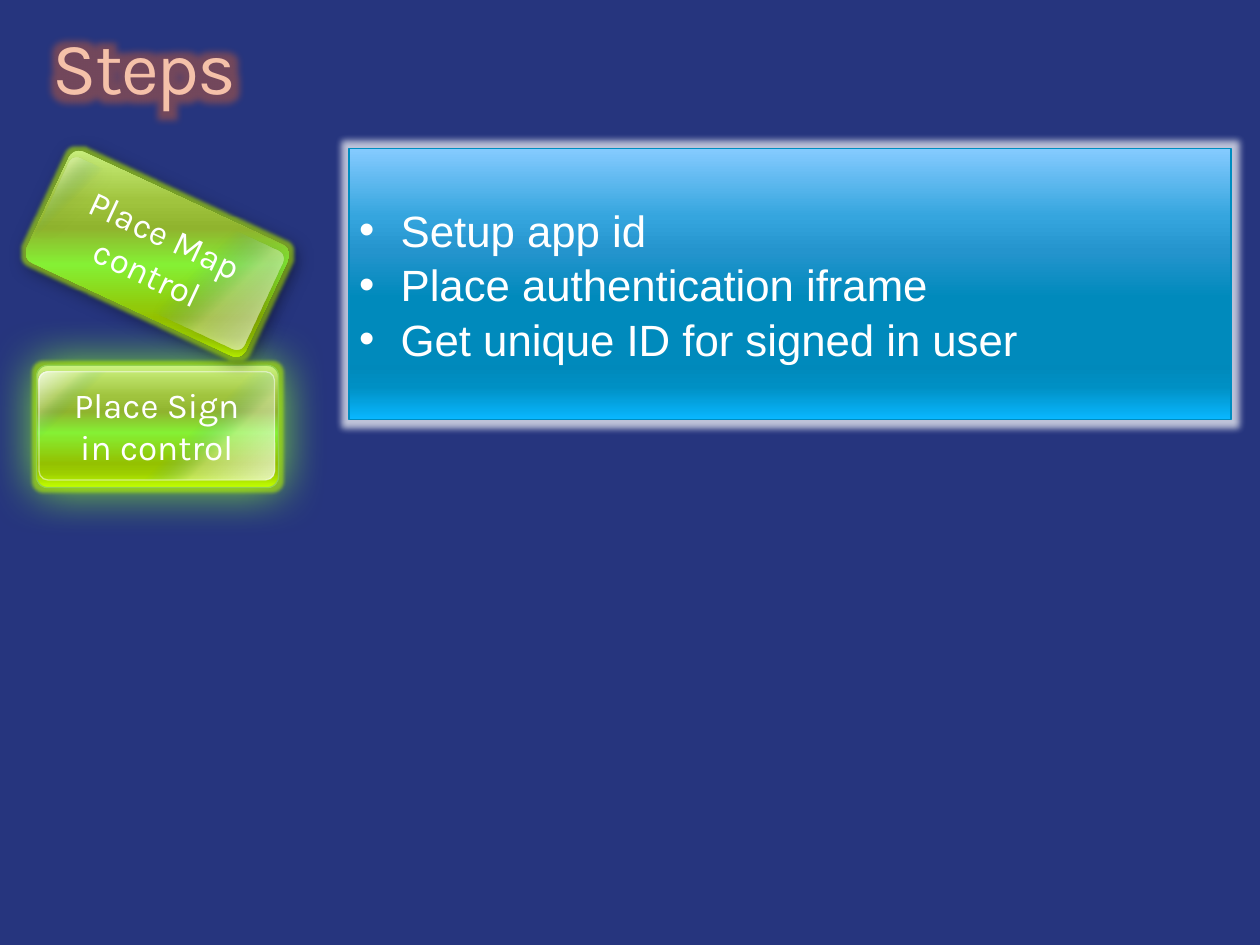
import pptx
import pptx.dml.color
import pptx.enum.shapes
import pptx.enum.text
import pptx.oxml
import pptx.oxml.ns
import pptx.util
from dataclasses import dataclass

Pt = pptx.util.Pt
RGB = pptx.dml.color.RGBColor.from_string
ANCHOR = pptx.enum.text.MSO_ANCHOR
ALIGN = pptx.enum.text.PP_ALIGN
qn = pptx.oxml.ns.qn


@dataclass
class Theme:
    background: str = "26357E"
    text: str = "FFFFFF"
    title_outline: str = "E76429"
    panel_line: str = "008DC0"
    button_line: str = "92D050"
    button_glow: str = "B4F000"
    button_shadow: tuple = ("85F034", 100, 28, 0)
    dark_shadow: tuple = ("000000", 45, 10, 3)
    heading_font: str = "Karla"
    body_font: str = "Arial"
    title_size: int = 42
    body_size: int = 25
    button_size: int = 20
    # Gradient stops: position, colour and, where needed, opacity
    title_stops: tuple = ((28, "FFFFFF"), (52, "F5C1A9"), (56, "FFD6A9"))
    panel_stops: tuple = ((0, "85CBFF"), (25, "35A5DE"), (38, "2494CD"), (55, "008ABC"),
                          (80, "0089BB"), (88, "0090C4"), (100, "09B7FF"))
    button_stops: tuple = ((0, "CCF280"), (25, "A0C43E"), (38, "90B42E"), (55, "85F034"),
                           (80, "94C101"), (88, "9CCD00"), (100, "C2FF00"))
    gloss_stops: tuple = ((0, "FFFFFF", 70), (25, "FFFFFF", 33), (38, "2494CD", 0),
                          (55, "008ABC", 0), (80, "0089BB", 0), (88, "FFFFFF", 22),
                          (100, "FFFFFF", 74))


def element(xml):
    name, rest = xml[1:].split(">", 1)
    return pptx.oxml.parse_xml(f"<{name} {pptx.oxml.ns.nsdecls('a')}>{rest}")


def color(value, opacity=100):
    return f'<a:srgbClr val="{value}"><a:alpha val="{opacity * 1000}"/></a:srgbClr>'


def glow(value, opacity, radius):
    return element(f'<a:glow rad="{Pt(radius)}">{color(value, opacity)}</a:glow>')


def outer_shadow(value, opacity, blur, distance):
    return element(f'<a:outerShdw blurRad="{Pt(blur)}" dist="{Pt(distance)}" dir="2700000" '
                   f'algn="ctr" rotWithShape="0">{color(value, opacity)}</a:outerShdw>')


class SlideBuilder:
    COLUMNS, ROWS = 100, 75

    def __init__(self, prs, theme):
        self.theme = theme
        self.cell_w = prs.slide_width / self.COLUMNS
        self.cell_h = prs.slide_height / self.ROWS
        self.slide = prs.slides.add_slide(prs.slide_layouts[1])
        fill = self.slide.background.fill
        fill.solid()
        fill.fore_color.rgb = RGB(theme.background)

    def box(self, col, row, cols, rows):
        return [round(v) for v in (col * self.cell_w, row * self.cell_h,
                                   cols * self.cell_w, rows * self.cell_h)]

    def place(self, sp, *cells):
        sp.left, sp.top, sp.width, sp.height = self.box(*cells)

    def gradient(self, fill, parent, stops, radial=False):
        """Fill the parent element with a top-down or corner gradient."""
        fill.background()
        stop_xml = "".join(f'<a:gs pos="{pos * 1000}">{color(*c)}</a:gs>' for pos, *c in stops)
        path = ('<a:path path="circle"><a:fillToRect l="100000" t="100000"/></a:path>'
                if radial else '<a:lin ang="5400000" scaled="0"/>')
        grad = element(f'<a:gradFill rotWithShape="{int(radial)}"><a:gsLst>{stop_xml}'
                       f'</a:gsLst>{path}</a:gradFill>')
        parent.replace(parent.find(qn("a:noFill")), grad)
        return grad

    def effects(self, sp, *items):
        sp.shadow.inherit = False
        sp._element.spPr.find(qn("a:effectLst")).extend(items)

    def outline(self, sp, value, opacity=100):
        sp.line.color.rgb = RGB(value)
        sp.line.width = Pt(0.75)
        if opacity < 100:
            clr = sp.line._ln.find(".//" + qn("a:srgbClr"))
            clr.append(element(f'<a:alpha val="{opacity * 1000}"></a:alpha>'))

    def frame(self, sp, anchor, side=0, end=0):
        tf = sp.text_frame
        tf.word_wrap = True
        tf.auto_size = pptx.enum.text.MSO_AUTO_SIZE.NONE
        tf.vertical_anchor = anchor
        tf.margin_left = tf.margin_right = pptx.util.Inches(side)
        tf.margin_top = tf.margin_bottom = pptx.util.Inches(end)
        return tf

    def title(self, text, *cells):
        t = self.theme
        sp = self.slide.shapes.title
        self.place(sp, *cells)
        tf = self.frame(sp, ANCHOR.TOP)
        tf.text = text
        p = tf.paragraphs[0]
        p.alignment = ALIGN.LEFT
        p.line_spacing = 0.9
        r = p.runs[0]
        r.font.size, r.font.name = Pt(t.title_size), t.heading_font
        rPr = r.font._element if hasattr(r.font, "_element") else r._r.get_or_add_rPr()
        rPr.set("spc", "-110")
        grad = self.gradient(r.font.fill, rPr, t.title_stops)
        grad.addprevious(element(f'<a:ln w="{Pt(0.25)}"><a:solidFill>'
                                 f'{color(t.title_outline)}</a:solidFill></a:ln>'))
        effect_list = element("<a:effectLst></a:effectLst>")
        effect_list.append(glow(t.title_outline, 40, 18))
        grad.addnext(effect_list)

    def panel(self, items, *cells):
        t = self.theme
        sp = self.slide.placeholders[1]
        self.place(sp, *cells)
        self.gradient(sp.fill, sp._element.spPr, t.panel_stops)
        self.outline(sp, t.panel_line)
        self.effects(sp, glow(t.text, 70, 8))
        tf = self.frame(sp, ANCHOR.MIDDLE, 0.08, 0.04)
        for i, item in enumerate(items):
            p = tf.paragraphs[0] if i == 0 else tf.add_paragraph()
            p.text = item
            p.space_before = Pt(1.2 if i else 0)
            pPr = p._p.get_or_add_pPr()
            indent = pptx.util.Inches(0.33)
            pPr.set("marL", str(indent))
            pPr.set("indent", str(-indent))
            pPr.append(element('<a:buFont typeface="Arial"></a:buFont>'))
            pPr.append(element('<a:buChar char="•"></a:buChar>'))
            font = p.runs[0].font
            font.size, font.name = Pt(t.body_size), t.body_font
            font.color.rgb = RGB(t.text)

    def layer(self, rotation, radius, *cells):
        kind = pptx.enum.shapes.MSO_SHAPE.ROUNDED_RECTANGLE
        sp = self.slide.shapes.add_shape(kind, *self.box(*cells))
        sp.adjustments[0] = radius
        sp.rotation = rotation
        sp.fill.background()
        sp.line.fill.background()
        return sp

    def button(self, text, row, rotation=0, lit=False):
        t = self.theme
        shadow = t.button_shadow if lit else t.dark_shadow
        # Coloured base
        base = self.layer(rotation, 0.09, 2.9, row, 19.2, 9.7)
        self.gradient(base.fill, base._element.spPr, t.button_stops)
        self.effects(base, glow(t.button_glow, 60, 4), outer_shadow(*shadow))
        # Glossy sheen
        gloss = self.layer(rotation, 0.083, 3.1, row + 0.5, 18.7, 8.6)
        self.gradient(gloss.fill, gloss._element.spPr, t.gloss_stops, radial=True)
        self.effects(gloss, *([] if lit else [outer_shadow(*shadow)]))
        if lit:
            self.outline(base, t.button_line)
            self.outline(gloss, t.text, 50)
        # Label
        label = self.layer(rotation, 0.083, 3.1, row + 0.3, 18.7, 9)
        self.effects(label)
        tf = self.frame(label, ANCHOR.MIDDLE, 0.12, 0.06)
        tf.text = text
        p = tf.paragraphs[0]
        p.alignment = ALIGN.CENTER
        font = p.runs[0].font
        font.size, font.name = Pt(t.button_size), t.heading_font
        font.color.rgb = RGB(t.text)


def main():
    prs = pptx.Presentation()
    prs.slide_width, prs.slide_height = pptx.util.Inches(10), pptx.util.Inches(7.5)
    s = SlideBuilder(prs, Theme())
    s.title("Steps", 4.2, 2.5, 91.6, 6.4)
    s.panel(["Setup app id", "Place authentication iframe",
             "Get unique ID for signed in user"], 27.7, 11.8, 70, 21.5)
    # Step buttons: the finished one is tilted, the current one is lit
    s.button("Place Sign in control", 29, lit=True)
    s.button("Place Map control", 15.3, rotation=25)
    prs.save("out.pptx")


if __name__ == "__main__":
    main()
